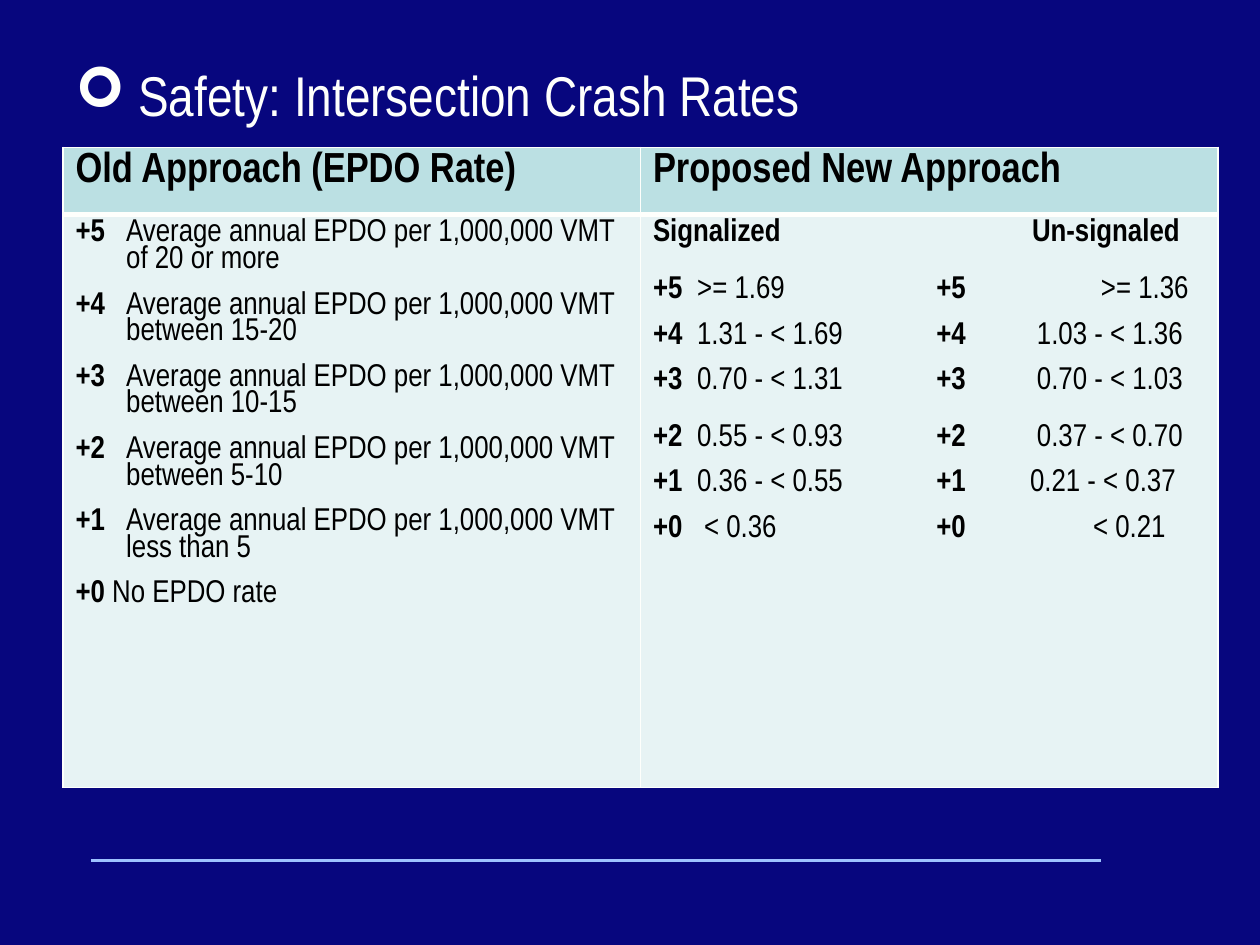
from lxml.etree import SubElement
from pptx import Presentation
from pptx.dml.color import RGBColor
from pptx.enum.shapes import MSO_CONNECTOR
from pptx.enum.text import MSO_AUTO_SIZE
from pptx.oxml.ns import qn
from pptx.util import Cm, Pt

NAVY = RGBColor(0x07, 0x06, 0x7E)
WHITE = RGBColor(0xFE, 0xFF, 0xFC)
BLACK = RGBColor(0, 0, 0)
RULE = RGBColor(0x9D, 0xC2, 0xFF)
HEAD_FILL = RGBColor(0xBB, 0xE0, 0xE3)
BODY_FILL = RGBColor(0xE7, 0xF3, 0xF4)
FONT = "Arial Narrow"
GAP, WIDE_GAP = 10.8, 17.1  # points before a paragraph

TITLE = "Safety: Intersection Crash Rates"
HEADERS = ["Old Approach (EPDO Rate)", "Proposed New Approach"]
VMT = "Average annual EPDO per 1,000,000 VMT "
OLD_RATES = [
    ("+5", VMT + "of 20 or more"),
    ("+4", VMT + "between 15-20"),
    ("+3", VMT + "between 10-15"),
    ("+2", VMT + "between 5-10"),
    ("+1", VMT + "less than 5"),
]
NO_RATE = ("+0", " No EPDO rate")
GROUPS = ("Signalized", "Un-signaled")
# score, signalized, un-signaled, gap before, tab of each range (cm)
NEW_RATES = [
    ("+5", ">= 1.69", ">= 1.36", WIDE_GAP, 0.89, 9.03),
    ("+4", "1.31 - < 1.69", "1.03 - < 1.36", GAP, 0.89, 7.74),
    ("+3", "0.70 - < 1.31", "0.70 - < 1.03", GAP, 0.89, 7.74),
    ("+2", "0.55 - < 0.93", "0.37 - < 0.70", WIDE_GAP, 0.89, 7.74),
    ("+1", "0.36 - < 0.55", "0.21 - < 0.37", GAP, 0.89, 7.6),
    ("+0", "< 0.36", "< 0.21", GAP, 1.03, 8.87),
]
SCORE_TAB, GROUP_TAB, HANG = 5.71, 7.64, 1.02


def add_run(p, text, size, bold=False, color=BLACK):
    r = p.add_run()
    r.text = text
    r.font.name, r.font.size, r.font.bold = FONT, Pt(size), bold
    r.font.color.rgb = color


def hang(p, indent):
    pPr = p._p.get_or_add_pPr()
    pPr.set("marL", str(Cm(indent)))
    pPr.set("indent", str(-Cm(indent)))
    return pPr


def add_line(tf, runs, gap=0, tabs=(), indent=0, size=18):
    """Add a paragraph of (text, bold) runs, reusing the empty first one."""
    p = tf.paragraphs[0] if not tf.text else tf.add_paragraph()
    if indent:
        hang(p, indent)
    if tabs:
        tab_list = SubElement(p._p.get_or_add_pPr(), qn("a:tabLst"))
        for tab in tabs:
            SubElement(tab_list, qn("a:tab"), pos=str(Cm(tab)), algn="l")
    p.line_spacing = 0.9
    if gap:
        p.space_before = Pt(gap)
    for text, bold in runs:
        add_run(p, text, size, bold)


def style_cell(cell, fill, **widths):
    tcPr = cell._tc.get_or_add_tcPr()
    for side in ("lnL", "lnR", "lnT", "lnB"):
        ln = SubElement(tcPr, qn("a:" + side), w=str(Pt(widths.get(side, 1))))
        solid = SubElement(ln, qn("a:solidFill"))
        SubElement(solid, qn("a:srgbClr"), val=str(WHITE))
    cell.fill.solid()
    cell.fill.fore_color.rgb = fill


prs = Presentation()
prs.slide_width, prs.slide_height = Cm(25.4), Cm(19.05)
s = prs.slides.add_slide(prs.slide_layouts[6])
s.background.fill.solid()
s.background.fill.fore_color.rgb = NAVY

# Footer rule
rule = s.shapes.add_connector(MSO_CONNECTOR.STRAIGHT, Cm(1.83), Cm(17.35), Cm(22.2), Cm(17.35))
rule.line.color.rgb = RULE
rule.line.width = Pt(1.5)
SubElement(rule._element.spPr, qn("a:effectLst"))

# Comparison table
table = s.shapes.add_table(2, 2, Cm(1.27), Cm(2.97), Cm(23.28), Cm(12.91)).table
for col in table.columns:
    col.width = Cm(11.64)
table.rows[0].height, table.rows[1].height = Cm(1.35), Cm(11.56)
for i, header in enumerate(HEADERS):
    style_cell(table.cell(0, i), HEAD_FILL, lnB=3)
    style_cell(table.cell(1, i), BODY_FILL, lnT=3)
    add_line(table.cell(0, i).text_frame, [(header, True)], size=24)

# Old approach
tf = table.cell(1, 0).text_frame
for i, (score, text) in enumerate(OLD_RATES):
    add_line(tf, [(score + "\t", True), (text, False)], GAP if i else 0, indent=HANG)
add_line(tf, [(NO_RATE[0], True), (NO_RATE[1], False)], GAP)

# New approach
tf = table.cell(1, 1).text_frame
add_line(tf, [("\t".join(GROUPS), True)], tabs=[GROUP_TAB])
for score, signal, unsignal, gap, left_tab, right_tab in NEW_RATES:
    runs = [(score + "\t", True), (signal + "\t", False),
            (score + "\t", True), (unsignal, False)]
    add_line(tf, runs, gap, [left_tab, SCORE_TAB, right_tab])

# Title
tf = s.shapes.add_textbox(Cm(1.27), Cm(1.09), Cm(16.2), Cm(1.62)).text_frame
tf.word_wrap = False
tf.auto_size = MSO_AUTO_SIZE.SHAPE_TO_FIT_TEXT
p = tf.paragraphs[0]
pPr = hang(p, 1.27)
SubElement(pPr, qn("a:buFont"), typeface="Wingdings")
SubElement(pPr, qn("a:buChar"), char="➢")
add_run(p, TITLE, 32, color=WHITE)

prs.save("out.pptx")
